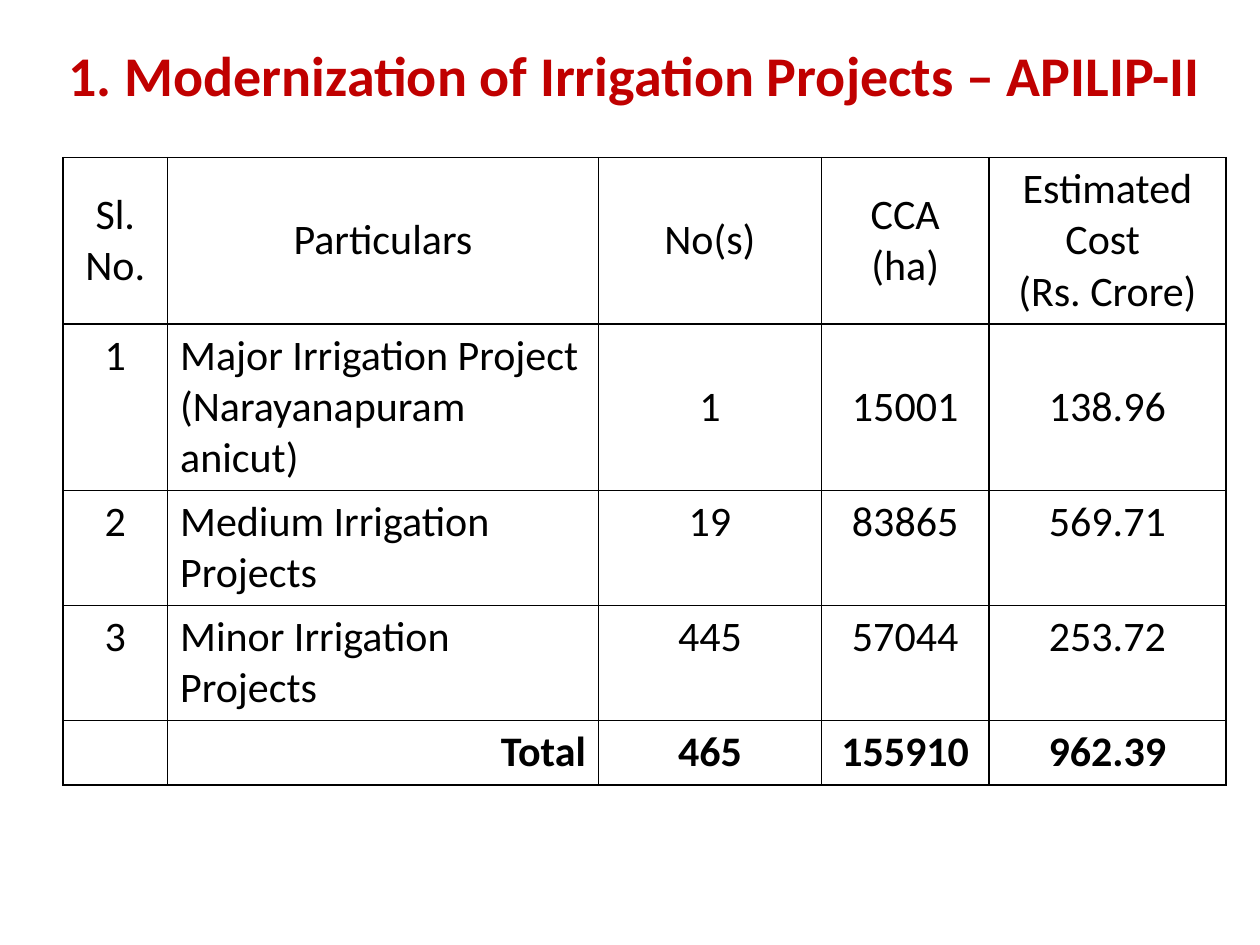
from dataclasses import dataclass

from lxml.etree import SubElement
from pptx import Presentation
from pptx.dml.color import RGBColor
from pptx.enum.text import MSO_ANCHOR as Anchor, MSO_AUTO_SIZE as AutoSize, PP_ALIGN as Align
from pptx.oxml.ns import qn
from pptx.util import Inches, Pt

COLORS = {"title": "C00000", "text": "000000", "border": "000000"}
FONT = "Calibri"
SLIDE_WIDTH, SLIDE_HEIGHT = Inches(10), Inches(7.5)
COLUMN_WIDTHS = (0.83, 3.42, 1.77, 1.33, 1.88)
ROW_HEIGHTS = (1.32, 1.32, 0.91, 0.91, 0.51)
COLUMN_ALIGNS = (Align.CENTER, Align.LEFT, Align.CENTER, Align.CENTER, Align.CENTER)


@dataclass
class Row:
    texts: tuple[str, ...]
    aligns: tuple = COLUMN_ALIGNS
    middle: tuple[int, ...] = ()
    tight: tuple[int, ...] = ()
    bold: bool = False


ROWS = (
    Row(("Sl. No.", "Particulars", "No(s)", "CCA\n(ha)", "Estimated Cost \n(Rs. Crore)"),
        aligns=(Align.CENTER,) * 5, middle=(0, 1, 2, 3, 4)),
    Row(("1", "Major Irrigation Project\n(Narayanapuram anicut)", "1", "15001", "138.96"),
        middle=(2, 3, 4), tight=(3, 4)),
    Row(("2", "Medium Irrigation Projects", "19", "83865", "569.71")),
    Row(("3", "Minor Irrigation Projects", "445", "57044", "253.72")),
    Row(("", "Total", "465", "155910", "962.39"),
        aligns=(Align.CENTER, Align.RIGHT) + COLUMN_ALIGNS[2:], bold=True),
)


def format_text(frame, size: int, color: str, bold: bool, align) -> None:
    for para in frame.paragraphs:
        para.alignment = align
        for span in para.runs:
            span.font.name = FONT
            span.font.size = Pt(size)
            span.font.bold = bold
            span.font.color.rgb = RGBColor.from_string(COLORS[color])


def add_borders(cell) -> None:
    """Outline a cell; the lines must come before its fill."""
    properties = cell._tc.get_or_add_tcPr()
    for index, side in enumerate(("lnL", "lnR", "lnT", "lnB")):
        line = SubElement(properties, qn(f"a:{side}"), w=str(Pt(1)))
        fill = SubElement(line, qn("a:solidFill"))
        SubElement(fill, qn("a:srgbClr"), val=COLORS["border"])
        properties.insert(index, line)


def fill_row(table, row_index: int, row: Row) -> None:
    for column, (text, align) in enumerate(zip(row.texts, row.aligns)):
        cell = table.cell(row_index, column)
        cell.text_frame.text = text
        cell.vertical_anchor = Anchor.MIDDLE if column in row.middle else Anchor.TOP
        if column in row.tight:
            cell.margin_left = cell.margin_right = cell.margin_top = Inches(0.01)
            cell.margin_bottom = 0
        format_text(cell.text_frame, 24, "text", row.bold, align)
        cell.fill.background()
        add_borders(cell)


def add_cost_table(page) -> None:
    frame = page.shapes.add_table(
        len(ROWS), len(COLUMN_WIDTHS), int(SLIDE_WIDTH * 0.05), int(SLIDE_HEIGHT / 6),
        Inches(sum(COLUMN_WIDTHS)), Inches(sum(ROW_HEIGHTS)))
    table = frame.table
    table.first_row = table.horz_banding = False
    for column, width in zip(table.columns, COLUMN_WIDTHS):
        column.width = Inches(width)
    for index, (height, row) in enumerate(zip(ROW_HEIGHTS, ROWS)):
        table.rows[index].height = Inches(height)
        fill_row(table, index, row)


def set_title(page, text: str) -> None:
    title = page.shapes.title
    title.left, title.top = Inches(0.25), Inches(0.25)
    title.width, title.height = Inches(9.58), Inches(0.67)
    frame = title.text_frame
    frame.text = text
    frame.word_wrap = True
    frame.auto_size = AutoSize.NONE
    frame.vertical_anchor = Anchor.MIDDLE
    format_text(frame, 32, "title", True, Align.CENTER)


def main() -> None:
    deck = Presentation()
    deck.slide_width, deck.slide_height = SLIDE_WIDTH, SLIDE_HEIGHT
    page = deck.slides.add_slide(deck.slide_layouts.get_by_name("Title Only"))
    # Heading
    set_title(page, "1. Modernization of Irrigation Projects – APILIP-II")
    # Projects with their area and cost
    add_cost_table(page)
    deck.save("out.pptx")


if __name__ == "__main__":
    main()
